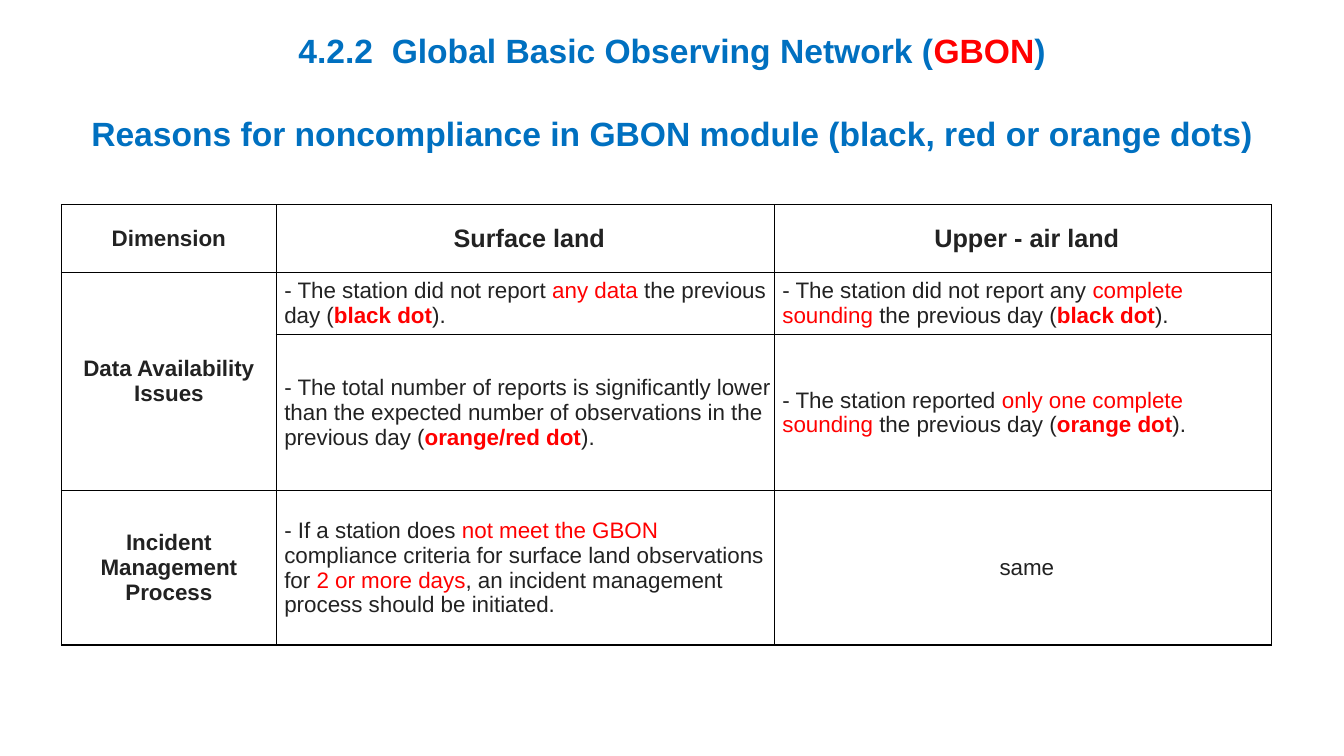
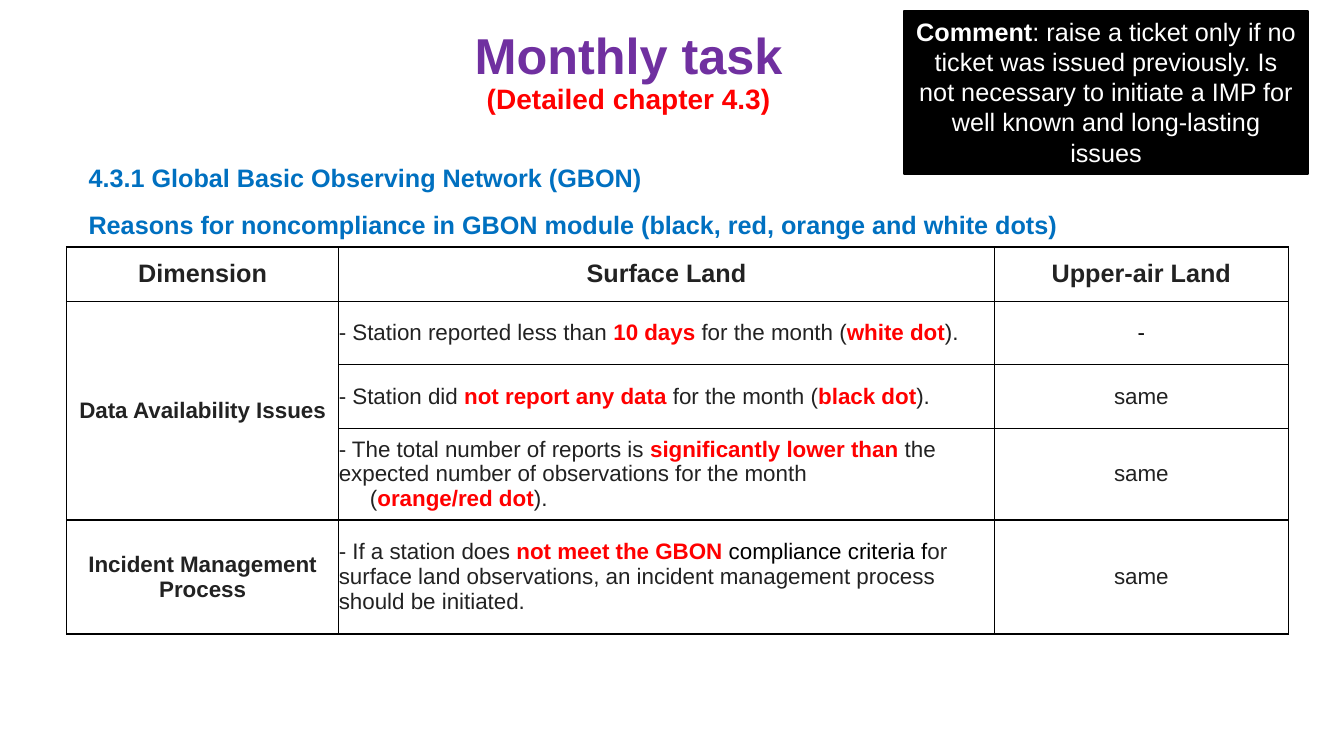
from dataclasses import dataclass

from lxml import etree
from pptx import Presentation
from pptx.dml import color
from pptx.enum import shapes, text
from pptx.oxml import ns
from pptx.util import Inches, Pt

FONT = "Arial"
INK, BLACK, WHITE = "222222", "000000", "FFFFFF"
RED, BLUE, PURPLE = "FF0000", "0070C0", "7030A0"
CENTER, LEFT = text.PP_ALIGN.CENTER, text.PP_ALIGN.LEFT
TOP, MIDDLE = text.MSO_ANCHOR.TOP, text.MSO_ANCHOR.MIDDLE
TITLE_ONLY = 5


@dataclass
class Span:
    """A stretch of text whose colour or weight differs from its paragraph."""
    words: str
    hue: str = RED
    bold: bool = False


@dataclass
class Para:
    """A paragraph of plain strings and spans with its shared format."""
    content: list
    size: float = 16
    hue: str = INK
    bold: bool = False
    align: int = LEFT
    indent: float = 0
    before: float = 0
    after: float = 0
    spacing: float = 1


def rgb(value):
    """Turn a hex string into a colour."""
    return color.RGBColor.from_string(value)


def alert(words):
    """Return a bold red span."""
    return Span(words, bold=True)


def heading(words, size=16):
    """Return a bold centred table paragraph."""
    return Para([words], size, bold=True, align=CENTER)


def centred(words, hue=INK):
    """Return a plain centred table paragraph."""
    return Para([words], hue=hue, align=CENTER)


def write(frame, paras):
    """Fill a text frame with paragraphs."""
    for index, item in enumerate(paras):
        para = frame.paragraphs[0] if index == 0 else frame.add_paragraph()
        para.alignment = item.align
        para.line_spacing = item.spacing
        para.space_before = Pt(item.before)
        para.space_after = Pt(item.after)
        if item.indent:
            para._p.get_or_add_pPr().set("marL", str(Inches(item.indent)))
        para.font.name = FONT
        para.font.size = Pt(item.size)
        para.font.bold = item.bold
        para.font.color.rgb = rgb(item.hue)
        for piece in item.content:
            span = para.add_run()
            if isinstance(piece, Span):
                span.text = piece.words
                span.font.bold = piece.bold
                span.font.color.rgb = rgb(piece.hue)
            else:
                span.text = piece


def format_frame(frame, anchor):
    """Wrap text in a frame of fixed size."""
    frame.word_wrap = True
    frame.auto_size = text.MSO_AUTO_SIZE.NONE
    frame.vertical_anchor = anchor


def add_page(deck, box, paras, anchor):
    """Add a page whose title fills the given box."""
    page = deck.slides.add_slide(deck.slide_layouts[TITLE_ONLY])
    title = page.shapes.title
    title.left, title.top, title.width, title.height = map(Inches, box)
    format_frame(title.text_frame, anchor)
    write(title.text_frame, paras)
    return page


def add_subtitle(page, box, paras):
    """Add a text box for the section headings."""
    frame = page.shapes.add_textbox(*map(Inches, box)).text_frame
    format_frame(frame, TOP)
    write(frame, paras)


def add_comment(page, box, paras):
    """Add a black comment panel."""
    panel = page.shapes.add_shape(shapes.MSO_SHAPE.RECTANGLE, *map(Inches, box))
    panel.shadow.inherit = False
    panel.fill.solid()
    panel.fill.fore_color.rgb = rgb(BLACK)
    panel.line.color.rgb = rgb(BLACK)
    panel.line.width = Pt(1.5)
    format_frame(panel.text_frame, TOP)
    write(panel.text_frame, paras)


def add_borders(cell):
    """Draw thin black lines on all sides of a cell."""
    props = cell._tc.get_or_add_tcPr()
    for index, side in enumerate(("lnL", "lnR", "lnT", "lnB")):
        line = etree.Element(ns.qn(f"a:{side}"), w=str(Pt(1)))
        fill = etree.SubElement(line, ns.qn("a:solidFill"))
        etree.SubElement(fill, ns.qn("a:srgbClr"), val=BLACK)
        props.insert(index, line)


def add_reasons(page, corner, widths, heights, rows, issue_rows, inset=0):
    """Add a table of reasons, merging the issue heading over its rows."""
    box = (*corner, sum(widths), sum(heights))
    table = page.shapes.add_table(
        len(heights), len(widths), *map(Inches, box)).table
    table.first_row = table.horz_banding = False
    for column, width in zip(table.columns, widths):
        column.width = Inches(width)
    for row, height in zip(table.rows, heights):
        row.height = Inches(height)
    for row, entries in zip(table.rows, rows):
        for index, (cell, paras) in enumerate(zip(row.cells, entries)):
            cell.fill.solid()
            cell.fill.fore_color.rgb = rgb(WHITE)
            add_borders(cell)
            cell.margin_left = Inches(inset if index else 0)
            cell.margin_right = cell.margin_top = cell.margin_bottom = 0
            cell.vertical_anchor = MIDDLE
            write(cell.text_frame, paras)
    table.cell(1, 0).merge(table.cell(issue_rows, 0))


def add_daily_page(deck):
    """Build the page on daily noncompliance."""
    style = dict(size=24, hue=BLUE, bold=True, align=CENTER)
    page = add_page(deck, (0.72, 0.25, 11.89, 1.31), [
        Para(["4.2.2  Global Basic Observing Network (", alert("GBON"), ")"],
             **style),
        Para(["Reasons for noncompliance in GBON module "
              "(black, red or orange dots)"], before=30, **style),
    ], TOP)
    rows = [
        [[heading("Dimension")], [heading("Surface land", 18)],
         [heading("Upper - air land", 18)]],
        [[heading("Data Availability Issues")],
         [Para(["- The station did not report ", Span("any data"),
                " the previous day (", alert("black dot"), ")."])],
         [Para(["- The station did not report any ",
                Span("complete sounding "), "the previous day (",
                alert("black dot"), ")."])]],
        [[],
         [Para(["- The total number of reports is significantly lower than "
                "the expected number of observations in the previous day (",
                alert("orange/red dot"), ")."])],
         [Para(["- The station reported ", Span("only one complete sounding "),
                "the previous day (", alert("orange dot"), ")."])]],
        [[heading("Incident Management Process")],
         [Para(["- If a station does ", Span("not meet the GBON "),
                "compliance criteria for surface land observations for ",
                Span("2 or more days"), ", an incident management process "
                "should be initiated."])],
         [centred("same")]],
    ]
    add_reasons(page, (0.61, 2.03), (2.13, 4.94, 4.93),
                (0.67, 0.62, 1.55, 1.53), rows, 2, inset=0.08)


def add_monthly_page(deck):
    """Build the page on the monthly task."""
    style = dict(bold=True, align=CENTER, spacing=0.9)
    page = add_page(deck, (0, 0.25, 12.47, 0.95), [
        Para(["Monthly task"], 36, PURPLE, **style),
        Para(["(Detailed chapter 4.3)"], 20, RED, **style),
    ], MIDDLE)
    rows = [
        [[heading(words, 18)]
         for words in ("Dimension", "Surface Land", "Upper-air Land")],
        [[heading("Data Availability Issues")],
         [Para(["- Station reported less than ", alert("10 days"),
                " for the month (", alert("white dot"), ")."])],
         [centred("-", BLACK)]],
        [[],
         [Para(["- Station did ", alert("not report any data "),
                "for the month (", alert("black dot"), ")."])],
         [centred("same")]],
        [[],
         [Para(["- The total number of reports is ",
                alert("significantly lower than"),
                " the expected number of observations for the month"]),
          Para(["(", alert("orange/red dot"), ")."], indent=0.31)],
         [centred("same")]],
        [[heading("Incident Management Process")],
         [Para(["- If a station does ", alert("not meet the GBON "),
                Span("compliance criteria f", BLACK),
                "or surface land observations, an incident management "
                "process should be initiated."])],
         [centred("same")]],
    ]
    add_reasons(page, (0.66, 2.45), (2.7, 6.5, 2.92),
                (0.54, 0.63, 0.63, 0.91, 1.13), rows, 3)
    section = dict(size=18, hue=BLUE, bold=True, after=6)
    add_subtitle(page, (0.78, 1.56, 10.81, 0.9), [
        Para(["4.3.1 Global Basic Observing Network (GBON)"], **section),
        Para(["Reasons for noncompliance in GBON module "
              "(black, red, orange and white dots)"], before=6, **section),
    ])
    add_comment(page, (8.97, 0.11, 4, 1.62), [
        Para([Span("Comment", WHITE, True), ": raise a ticket only if no "
              "ticket was issued previously. Is not necessary to initiate a "
              "IMP for well known and long-lasting issues"],
             18, WHITE, align=CENTER),
    ])


def main():
    """Build and save the deck."""
    deck = Presentation()
    deck.slide_width, deck.slide_height = Inches(13.33), Inches(7.5)
    add_daily_page(deck)
    add_monthly_page(deck)
    deck.save("out.pptx")


if __name__ == "__main__":
    main()
